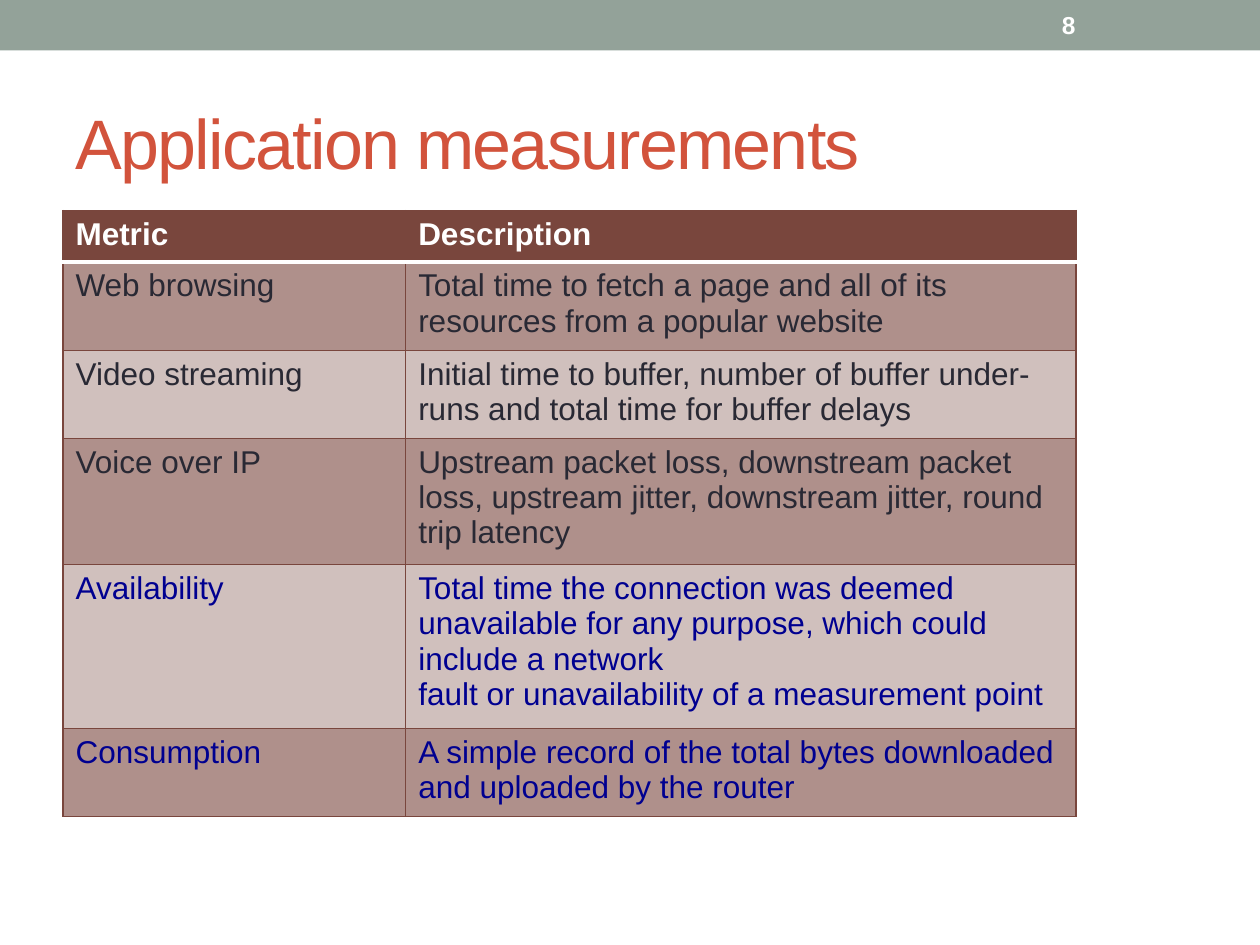
from dataclasses import dataclass

from lxml import etree
from pptx import Presentation
from pptx import util as u
from pptx.dml.color import RGBColor
from pptx.enum import shapes, text
from pptx.oxml import ns

FONT = "Arial"
BROWN = "79463D"
WHITE = "FFFFFF"
INK = "292934"
NAVY = "000090"
BANDS = ("AF908B", "D0C0BD")
COLUMN_WIDTHS = (2.72, 5.32)
ROW_HEIGHT = 0.41


@dataclass
class Metric:
    name: str
    description: tuple[str, ...]
    color: str = INK


METRICS = (
    Metric("Web browsing", (
        "Total time to fetch a page and all of its resources from a popular website",)),
    Metric("Video streaming", (
        "Initial time to buffer, number of buffer under-runs and total time for buffer delays",)),
    Metric("Voice over IP", (
        "Upstream packet loss, downstream packet loss, upstream jitter, "
        "downstream jitter, round trip latency",)),
    Metric("Availability", (
        "Total time the connection was deemed unavailable for any purpose, "
        "which could include a network",
        "fault or unavailability of a measurement point"), NAVY),
    Metric("Consumption", (
        "A simple record of the total bytes downloaded and uploaded by the router",), NAVY),
)


def rgb(value: str) -> RGBColor:
    return RGBColor.from_string(value)


def add_span(para, words: str, size: float, color: str, bold: bool = False):
    span = para.add_run()
    span.text = words
    span.font.name = FONT
    span.font.size = u.Pt(size)
    span.font.bold = bold
    span.font.color.rgb = rgb(color)
    return span


def set_border(cell, side: str, color: str, width: float) -> None:
    line = etree.Element(ns.qn(f"a:{side}"), w=str(u.Pt(width)))
    fill = etree.SubElement(line, ns.qn("a:solidFill"))
    etree.SubElement(fill, ns.qn("a:srgbClr"), val=color)
    properties = cell._tc.get_or_add_tcPr()
    borders = [child for child in properties if child.tag.startswith(ns.qn("a:ln"))]
    properties.insert(len(borders), line)


def fill_cell(cell, lines: tuple[str, ...], color: str, fill: str,
              bold: bool = False, rule_above: bool = False, rule_below: bool = False) -> None:
    cell.fill.solid()
    cell.fill.fore_color.rgb = rgb(fill)
    frame = cell.text_frame
    for index, words in enumerate(lines):
        para = frame.add_paragraph() if index else frame.paragraphs[0]
        add_span(para, words, 18, color, bold)
    white_rules = {"lnT": rule_above, "lnB": rule_below}
    for side in ("lnL", "lnR", "lnT", "lnB"):
        if white_rules.get(side):
            set_border(cell, side, WHITE, 2.08)
        else:
            set_border(cell, side, BROWN, 0.75)


def add_banner(page) -> None:
    banner = page.shapes.add_shape(
        shapes.MSO_SHAPE.RECTANGLE, 0, 0, u.Inches(10), u.Inches(0.4))
    banner.shadow.inherit = False
    banner.fill.solid()
    banner.fill.fore_color.rgb = rgb("93A299")
    banner.line.fill.background()


def add_page_number(page, number: str) -> None:
    box = page.shapes.add_textbox(
        u.Inches(8.33), u.Inches(0.02), u.Inches(1.17), u.Inches(0.36))
    box.text_frame.word_wrap = True
    box.text_frame.vertical_anchor = text.MSO_ANCHOR.MIDDLE
    add_span(box.text_frame.paragraphs[0], number, 14, WHITE, True)


def format_title(page, words: str) -> None:
    title = page.shapes.title
    title.left, title.top = u.Inches(0.5), u.Inches(0.58)
    title.width, title.height = u.Inches(9), u.Inches(1.08)
    title.text_frame.vertical_anchor = text.MSO_ANCHOR.MIDDLE
    para = title.text_frame.paragraphs[0]
    para.alignment = text.PP_ALIGN.LEFT
    span = add_span(para, words, 40, "D2533C")
    span.font._element.set("spc", "-100")


def add_metric_table(page) -> None:
    row_count = len(METRICS) + 1
    table = page.shapes.add_table(
        row_count, len(COLUMN_WIDTHS), u.Inches(0.5), u.Inches(1.67),
        u.Inches(sum(COLUMN_WIDTHS)), u.Inches(ROW_HEIGHT * row_count)).table
    for column, width in zip(table.columns, COLUMN_WIDTHS):
        column.width = u.Inches(width)
    for column, heading in enumerate(("Metric", "Description")):
        fill_cell(table.cell(0, column), (heading,), WHITE, BROWN, bold=True, rule_below=True)
    for row, metric in enumerate(METRICS, start=1):
        for column, lines in enumerate(((metric.name,), metric.description)):
            fill_cell(table.cell(row, column), lines, metric.color,
                      BANDS[(row - 1) % 2], rule_above=row == 1)


def main() -> None:
    deck = Presentation()
    deck.slide_width, deck.slide_height = u.Inches(10), u.Inches(7.5)
    page = deck.slides.add_slide(deck.slide_layouts[5])
    add_banner(page)
    format_title(page, "Application measurements")
    add_page_number(page, "8")
    add_metric_table(page)
    deck.save("out.pptx")


if __name__ == "__main__":
    main()
